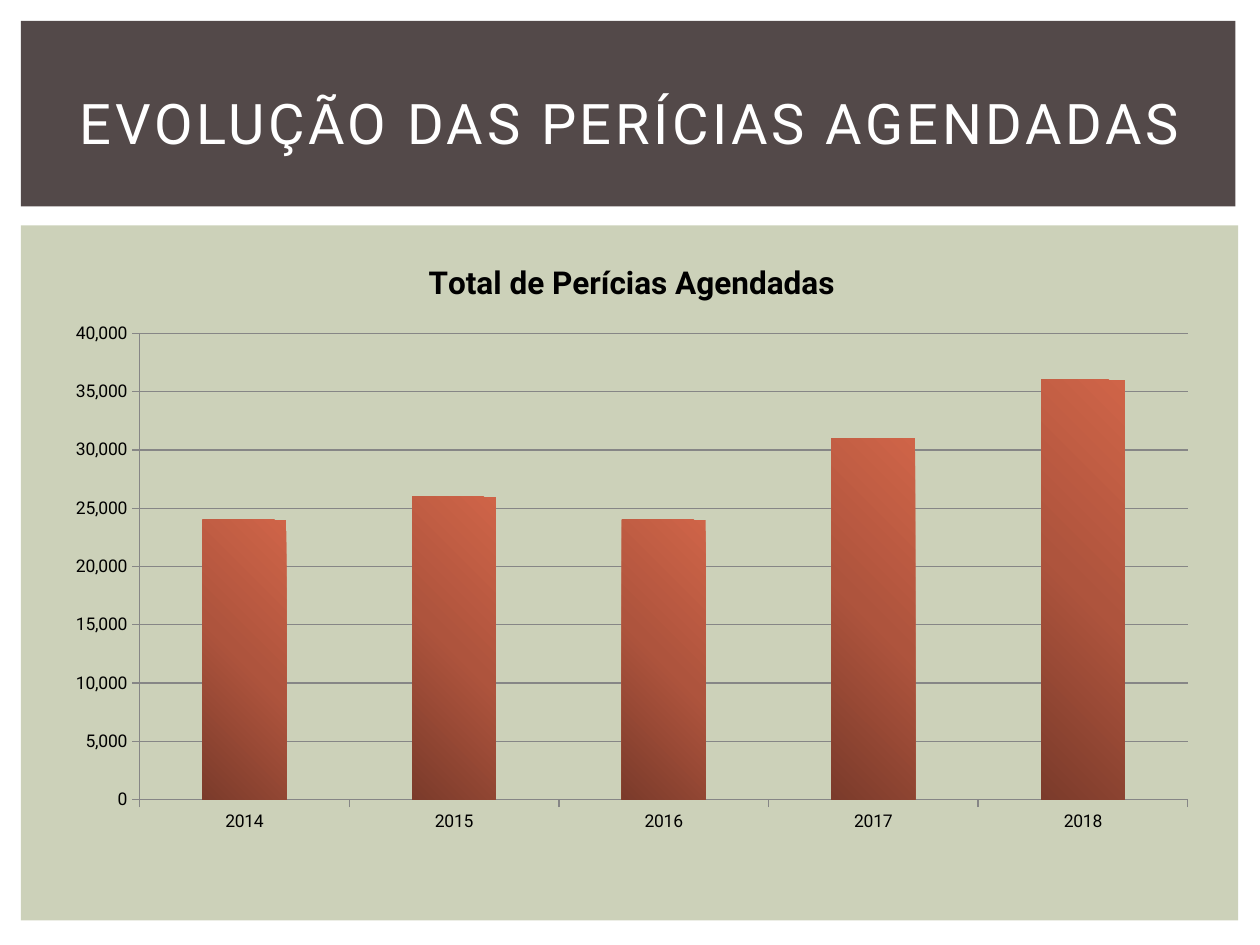
from dataclasses import dataclass

from lxml.etree import SubElement
from pptx import Presentation
from pptx.chart.data import CategoryChartData
from pptx.dml.color import RGBColor
from pptx.enum.chart import XL_CHART_TYPE, XL_TICK_MARK
from pptx.enum.shapes import MSO_SHAPE
from pptx.enum.text import MSO_ANCHOR, MSO_AUTO_SIZE, PP_ALIGN
from pptx.oxml import parse_xml
from pptx.oxml.ns import nsdecls, qn
from pptx.util import Pt


@dataclass(frozen=True)
class Theme:
    font: str = "Roboto"
    panel: str = "CCD1B9"
    banner: str = "534949"
    heading: str = "FFFFFF"
    text: str = "000000"
    line: str = "868686"
    bar_stops: tuple = ((0, "7B3B2B"), (50, "AE543D"), (100, "CF6448"))
    heading_size: int = 32
    chart_title_size: int = 18
    label_size: int = 10


class SlideBuilder:
    def __init__(self, slide, theme):
        self.slide = slide
        self.theme = theme

    def style_font(self, font, size, color, bold=False):
        font.name = self.theme.font
        font.size = Pt(size)
        font.bold = bold
        font.color.rgb = RGBColor.from_string(color)

    def add_panel(self, left, top, width, height, color):
        shape = self.slide.shapes.add_shape(
            MSO_SHAPE.RECTANGLE, Pt(left), Pt(top), Pt(width), Pt(height))
        shape.shadow.inherit = False
        shape.fill.solid()
        shape.fill.fore_color.rgb = RGBColor.from_string(color)
        shape.line.fill.background()

    def add_title(self, left, top, width, height, text):
        title = self.slide.shapes.title
        title.left, title.top = Pt(left), Pt(top)
        title.width, title.height = Pt(width), Pt(height)
        self.slide.shapes._spTree.append(title._element)
        frame = title.text_frame
        frame.text = text
        frame.word_wrap = True
        frame.auto_size = MSO_AUTO_SIZE.NONE
        frame.vertical_anchor = MSO_ANCHOR.MIDDLE
        frame.margin_left = frame.margin_right = 0
        paragraph = frame.paragraphs[0]
        paragraph.alignment = PP_ALIGN.CENTER
        self.style_font(paragraph.font, self.theme.heading_size, self.theme.heading)
        paragraph.runs[0].font._element.set("spc", "200")

    def add_column_chart(self, left, top, width, height, name, values, plot_area):
        data = CategoryChartData(number_format="#,##0")
        data.categories = list(values)
        data.add_series(name, values.values())
        chart = self.slide.shapes.add_chart(
            XL_CHART_TYPE.COLUMN_CLUSTERED,
            Pt(left), Pt(top), Pt(width), Pt(height), data).chart
        self.style_font(chart.font, self.theme.label_size, self.theme.text)
        chart.has_legend = False
        chart.has_title = True
        chart.chart_title.include_in_layout = False
        frame = chart.chart_title.text_frame
        frame.text = name
        self.style_font(frame.paragraphs[0].font, self.theme.chart_title_size,
                        self.theme.text, bold=True)
        self.style_axes(chart)
        plot = chart.plots[0]
        plot.gap_width = 150
        plot.vary_by_categories = False
        self.fill_bars(plot.series[0])
        sizes = (width, height, width, height)
        self.place_plot(chart, [part / size for part, size in zip(plot_area, sizes)])

    def style_axes(self, chart):
        line_color = RGBColor.from_string(self.theme.line)
        value_axis = chart.value_axis
        value_axis.minimum_scale = 0
        value_axis.maximum_scale = 40000
        value_axis.major_unit = 5000
        value_axis.has_major_gridlines = True
        value_axis.tick_labels.number_format = "#,##0"
        value_axis.tick_labels.number_format_is_linked = False
        for axis in (chart.category_axis, value_axis):
            axis.major_tick_mark = XL_TICK_MARK.OUTSIDE
            axis.format.line.color.rgb = line_color
            axis.format.line.width = Pt(0.75)
        gridline = value_axis.major_gridlines.format.line
        gridline.color.rgb = line_color
        gridline.width = Pt(0.75)

    def fill_bars(self, series):
        series.invert_if_negative = False
        series.format.fill.solid()
        solid = series._element.spPr.find(qn("a:solidFill"))
        stops = "".join(
            f'<a:gs pos="{position * 1000}"><a:srgbClr val="{color}"/></a:gs>'
            for position, color in self.theme.bar_stops)
        gradient = parse_xml(
            f'<a:gradFill {nsdecls("a")} rotWithShape="1"><a:gsLst>{stops}</a:gsLst>'
            '<a:path path="circle"><a:fillToRect t="100000" r="100000"/></a:path>'
            '</a:gradFill>')
        solid.getparent().replace(solid, gradient)

    def place_plot(self, chart, fractions):
        element = chart._chartSpace.chart.plotArea
        layout = element.find(qn("c:layout"))
        if layout is None:
            layout = SubElement(element, qn("c:layout"))
            element.insert(0, layout)
        manual = SubElement(layout, qn("c:manualLayout"))
        settings = {"layoutTarget": "inner", "xMode": "edge", "yMode": "edge"}
        settings.update(zip("xywh", fractions))
        for tag, value in settings.items():
            SubElement(manual, qn(f"c:{tag}")).set("val", str(value))


def main():
    presentation = Presentation()
    presentation.slide_width = Pt(720)
    presentation.slide_height = Pt(540)
    theme = Theme()
    slide = presentation.slides.add_slide(presentation.slide_layouts[5])
    builder = SlideBuilder(slide, theme)
    builder.add_panel(12, 128.8, 695.5, 397.2, theme.panel)
    builder.add_panel(12, 12, 694, 106, theme.banner)
    builder.add_title(30, 28, 660, 83, "EVOLUÇÃO DAS PERÍCIAS AGENDADAS")
    scheduled = {"2014": 24000, "2015": 26000, "2016": 24000,
                 "2017": 31000, "2018": 36000}
    builder.add_column_chart(30, 135.5, 662, 347, "Total de Perícias Agendadas",
                             scheduled, (49.8, 55, 599, 266.6))
    presentation.save("out.pptx")


if __name__ == "__main__":
    main()
